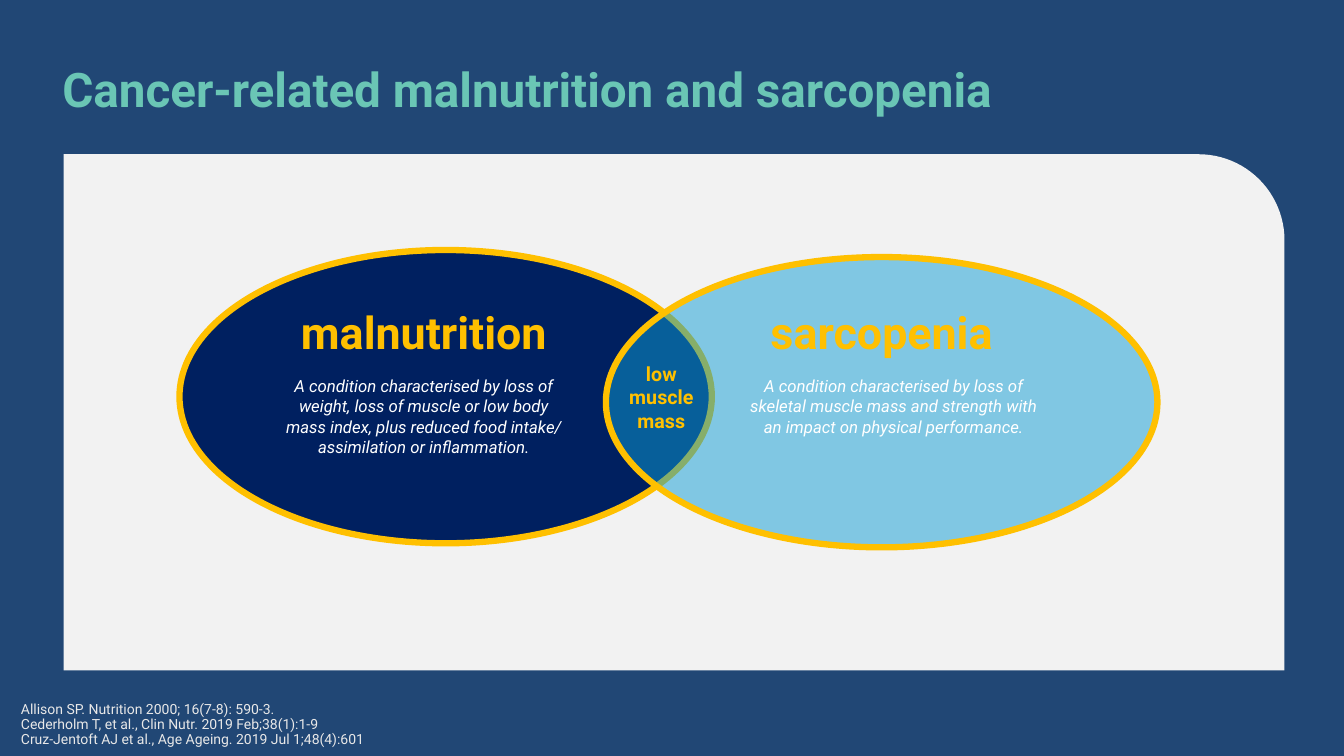
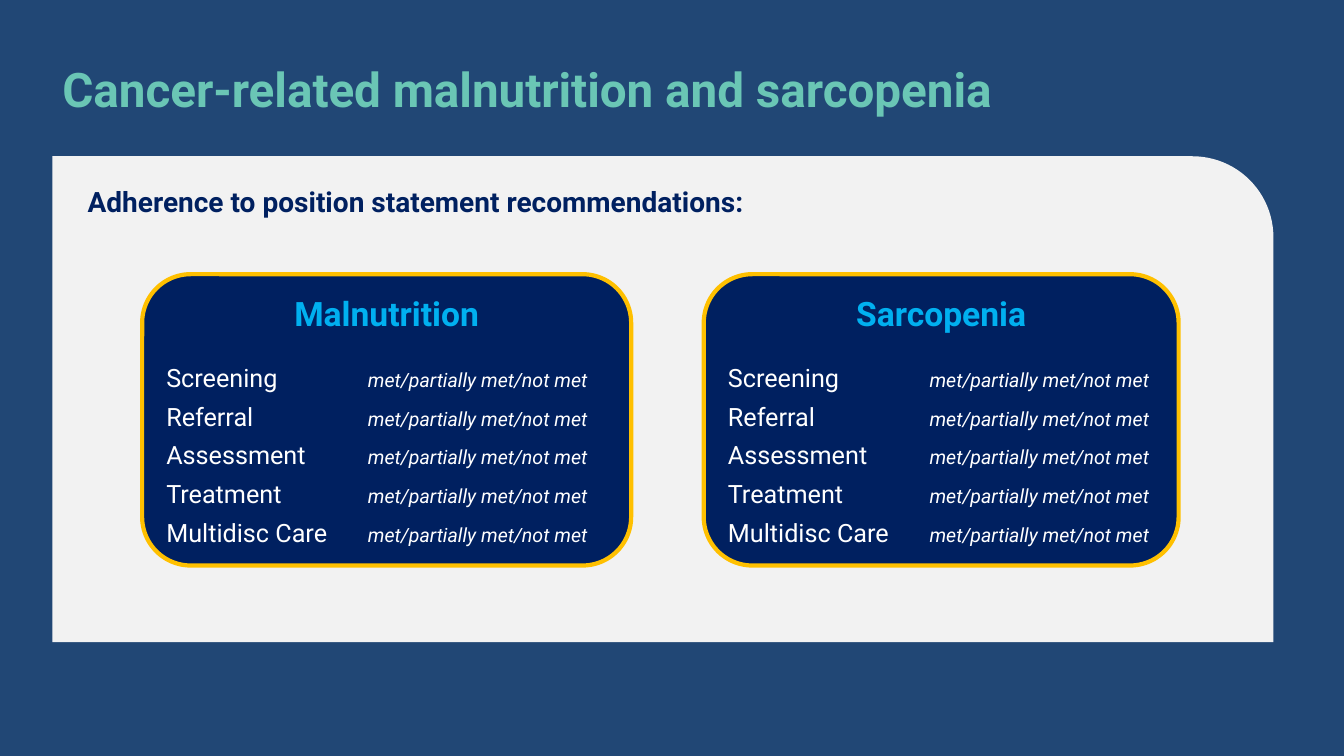
from dataclasses import dataclass, replace
from typing import Optional

from lxml import etree
from pptx import Presentation
from pptx import util as u
from pptx.dml.color import RGBColor
from pptx.enum import shapes, text
from pptx.oxml.ns import qn

# Shared look
FONT = "Roboto"
BLUE = RGBColor(0x21, 0x47, 0x75)
TEAL = RGBColor(0x6A, 0xC6, 0xB5)
PALE = RGBColor(0xF2, 0xF2, 0xF2)
GREY = RGBColor(0xE8, 0xE8, 0xE8)
NAVY = RGBColor(0x00, 0x20, 0x60)
SKY = RGBColor(0x0F, 0x9E, 0xD5)
CYAN = RGBColor(0x00, 0xB0, 0xF0)
GOLD = RGBColor(0xFF, 0xC0, 0x00)
WHITE = RGBColor(0xFF, 0xFF, 0xFF)

KIND = shapes.MSO_SHAPE
ALIGN = text.PP_ALIGN
ANCHOR = text.MSO_ANCHOR
TITLE = "Cancer-related malnutrition and sarcopenia"


@dataclass(frozen=True)
class Box:
    left: float
    top: float
    width: float
    height: float

    def emu(self) -> list:
        return [u.Inches(n) for n in (self.left, self.top, self.width, self.height)]


@dataclass(frozen=True)
class Style:
    size: float
    color: RGBColor
    bold: bool = False
    italic: bool = False


@dataclass(frozen=True)
class Oval:
    box: Box
    fill: RGBColor
    alpha: Optional[int] = None


@dataclass(frozen=True)
class Label:
    box: Box
    words: str
    style: Style


@dataclass(frozen=True)
class Card:
    box: Box
    head: str


# Text styles
HEAD = Style(34, TEAL, bold=True)
LEAD = Style(20, NAVY, bold=True)
NAME = Style(32, GOLD, bold=True)
CORE = replace(NAME, size=14)
BODY = Style(12, WHITE, italic=True)
CITE = Style(10, GREY)
CAP = Style(24, CYAN, bold=True)
ITEM = Style(18, WHITE)
MARK = replace(BODY, size=14)

# Slide 1 content
OVALS = [
    Oval(Box(1.78, 2.48, 5.28, 2.91), NAVY),
    Oval(Box(6.01, 2.55, 5.47, 2.88), SKY, alpha=50),
]
LABELS = [
    Label(Box(6.06, 3.54, 1, 0.81), "low muscle mass", CORE),
    Label(Box(7.14, 2.97, 3.21, 0.64), "sarcopenia", NAME),
    Label(Box(2.6, 2.97, 3.21, 0.64), "malnutrition", NAME),
    Label(Box(2.67, 3.68, 3.07, 1.21),
          "A condition characterised by loss of weight, loss of muscle or low "
          "body mass index, plus reduced food intake/ assimilation or "
          "inflammation.", BODY),
    Label(Box(7.33, 3.68, 3.07, 0.71),
          "A condition characterised by loss of skeletal muscle mass and "
          "strength with an impact on physical performance.", BODY),
]
CITES = [
    "Allison SP. Nutrition 2000; 16(7-8): 590-3.",
    "Cederholm T, et al., Clin Nutr. 2019 Feb;38(1):1-9",
    "Cruz-Jentoft AJ et al., Age Ageing. 2019 Jul 1;48(4):601",
]

# Slide 2 content
CARDS = [
    Card(Box(1.41, 2.72, 4.85, 2.89), "Malnutrition"),
    Card(Box(6.98, 2.72, 4.71, 2.89), "Sarcopenia"),
]
STEPS = ["Screening", "Referral", "Assessment", "Treatment", "Multidisc Care"]
RATING = "met/partially met/not met"


def add_run(para, words: str, style: Style) -> None:
    run = para.add_run()
    run.text = words
    font = run.font
    font.name = FONT
    font.size = u.Pt(style.size)
    font.bold = style.bold
    font.italic = style.italic
    font.color.rgb = style.color


def add_text(slide, box: Box, lines: list, style: Style, align=ALIGN.LEFT,
             anchor=ANCHOR.TOP, pitch: Optional[float] = None) -> None:
    frame = slide.shapes.add_textbox(*box.emu()).text_frame
    frame.word_wrap = True
    frame.vertical_anchor = anchor
    for i, line in enumerate(lines):
        para = frame.add_paragraph() if i else frame.paragraphs[0]
        para.alignment = align
        if pitch:
            para.line_spacing = pitch
        add_run(para, line, style)


def add_form(slide, kind, box: Box, fill: RGBColor, edge: float = 0):
    form = slide.shapes.add_shape(kind, *box.emu())
    form.shadow.inherit = False
    form.fill.solid()
    form.fill.fore_color.rgb = fill
    if edge:
        form.line.color.rgb = GOLD
        form.line.width = u.Pt(edge)
    else:
        form.line.fill.background()
    return form


def add_oval(slide, oval: Oval) -> None:
    form = add_form(slide, KIND.OVAL, oval.box, oval.fill, 4.5)
    if oval.alpha is not None:
        color = form.element.spPr.find(qn("a:solidFill"))[0]
        etree.SubElement(color, qn("a:alpha"), val=str(oval.alpha * 1000))


def add_stop(para, inches: float) -> None:
    tabs = etree.SubElement(para._p.get_or_add_pPr(), qn("a:tabLst"))
    etree.SubElement(tabs, qn("a:tab"), pos=str(u.Inches(inches)), algn="l")


def add_card(slide, card: Card) -> None:
    form = add_form(slide, KIND.ROUNDED_RECTANGLE, card.box, NAVY, 3)
    frame = form.text_frame
    frame.word_wrap = True
    frame.vertical_anchor = ANCHOR.MIDDLE
    para = frame.paragraphs[0]
    para.alignment = ALIGN.CENTER
    para.space_after = u.Pt(21)
    add_run(para, card.head, CAP)
    for step in STEPS:
        para = frame.add_paragraph()
        add_stop(para, 2)
        para.alignment = ALIGN.LEFT
        para.space_after = u.Pt(6)
        add_run(para, step + "\t", ITEM)
        add_run(para, RATING, MARK)


def add_base(deck, panel: Box):
    """Blue slide with the title and a pale panel."""
    slide = deck.slides.add_slide(deck.slide_layouts[6])
    back = slide.background.fill
    back.solid()
    back.fore_color.rgb = BLUE
    add_text(slide, Box(0.52, 0.28, 12.42, 1.26), [TITLE], HEAD,
             anchor=ANCHOR.MIDDLE, pitch=0.9)
    add_form(slide, KIND.ROUND_1_RECTANGLE, panel, PALE)
    return slide


def main() -> None:
    deck = Presentation()
    deck.slide_width = u.Inches(13.33)
    deck.slide_height = u.Inches(7.5)

    # Slide 1: two overlapping conditions
    slide = add_base(deck, Box(0.63, 1.53, 12.11, 5.12))
    for oval in OVALS:
        add_oval(slide, oval)
    for label in LABELS:
        add_text(slide, label.box, [label.words], label.style, ALIGN.CENTER)
    add_text(slide, Box(0.11, 6.92, 6.16, 0.56), CITES, CITE, pitch=0.9)

    # Slide 2: adherence cards
    slide = add_base(deck, Box(0.52, 1.55, 12.11, 4.82))
    add_text(slide, Box(0.77, 1.78, 11, 0.43),
             ["Adherence to position statement recommendations:"], LEAD)
    for card in CARDS:
        add_card(slide, card)

    deck.save("out.pptx")


if __name__ == "__main__":
    main()
